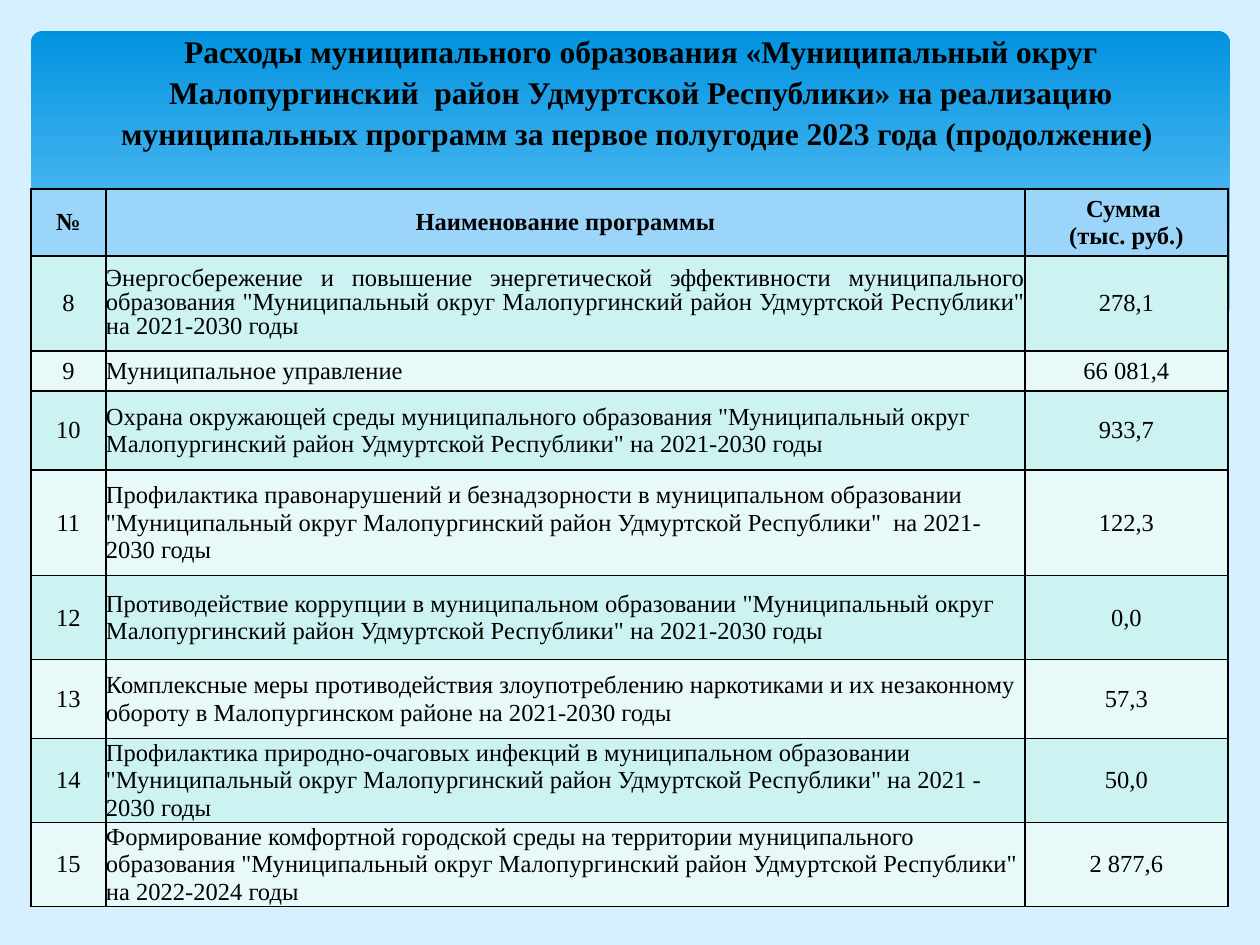
"""Build the slide on municipal programme spending for the first half of 2023."""
from dataclasses import dataclass, field

from lxml import etree
from pptx import Presentation
from pptx import util as u
from pptx.dml import color
from pptx.enum import shapes, text
from pptx.oxml import ns

PX = 914400 / 126
ALIGN = text.PP_ALIGN


@dataclass(frozen=True)
class Theme:
    font: str = "Times New Roman"
    title_size: int = 18
    table_size: int = 14
    ink: str = "000000"
    page: str = "D6F0FF"
    panel_top: str = "0293E0"
    panel_bottom: str = "83D3FE"
    header: str = "9BD5FA"
    bands: tuple[str, str] = ("CCF3F1", "E7F9F8")


@dataclass(frozen=True)
class Box:
    left: int
    top: int
    width: int
    height: int

    def emu(self) -> list[int]:
        return [px(n) for n in (self.left, self.top, self.width, self.height)]


@dataclass(frozen=True)
class Row:
    number: str
    name: str
    amount: str
    height: int
    name_format: dict = field(default_factory=lambda: {"alignment": ALIGN.LEFT})


THEME = Theme()
PANEL = Box(31, 31, 1199, 341)
TABLE = Box(31, 189, 1197, 714)
TITLE = Box(53, 23, 1176, 135)
COLUMNS = (75, 919, 203)
WAVE = (
    (1231, 310), (1172, 330), (1087, 345), (1019, 349), (937, 345), (842, 334),
    (730, 315), (563, 277), (460, 255), (368, 239), (290, 233), (223, 232),
    (150, 236), (84, 248), (29, 268), (29, 415), (1231, 415),
)
HEADING = (
    "Расходы муниципального образования «Муниципальный округ Малопургинский  район "
    "Удмуртской Республики» на реализацию муниципальных программ за первое полугодие "
    "2023 года (продолжение) "
)
DISTRICT = '"Муниципальный округ Малопургинский район Удмуртской Республики"'
HEADER = Row("№", "Наименование программы", "Сумма \n(тыс. руб.)", 63,
             {"alignment": ALIGN.CENTER})
ROWS = (
    Row("8", "Энергосбережение и повышение энергетической эффективности муниципального "
        f"образования {DISTRICT} на 2021-2030 годы", "278,1", 95,
        {"alignment": ALIGN.JUSTIFY, "line_spacing": 0.9}),
    Row("9", "Муниципальное управление", "66 081,4", 40),
    Row("10", "Охрана окружающей среды муниципального образования "
        f"{DISTRICT} на 2021-2030 годы", "933,7", 79),
    Row("11", "Профилактика правонарушений и безнадзорности в муниципальном образовании "
        f"{DISTRICT}  на 2021-2030 годы", "122,3", 106),
    Row("12", "Противодействие коррупции в муниципальном образовании "
        f"{DISTRICT} на 2021-2030 годы", "0,0", 84),
    Row("13", "Комплексные меры противодействия злоупотреблению наркотиками и их "
        "незаконному обороту в Малопургинском районе на 2021-2030 годы", "57,3", 79),
    Row("14", "Профилактика природно-очаговых инфекций в муниципальном образовании "
        f"{DISTRICT} на 2021 - 2030 годы", "50,0", 84),
    Row("15", "Формирование комфортной городской среды на территории муниципального "
        f"образования {DISTRICT} на 2022-2024 годы", "2 877,6", 84),
)


def px(length: int) -> int:
    return round(length * PX)


def rgb(value: str) -> color.RGBColor:
    return color.RGBColor.from_string(value)


def apply(target, values: dict) -> None:
    for name, value in values.items():
        setattr(target, name, value)


def paint(fill, value: str) -> None:
    fill.solid()
    fill.fore_color.rgb = rgb(value)


def style_text(frame, size: int, bold: bool, para_format: dict) -> None:
    for para in frame.paragraphs:
        apply(para, para_format)
        for span in para.runs:
            apply(span.font, {"name": THEME.font, "size": u.Pt(size), "bold": bold})
            span.font.color.rgb = rgb(THEME.ink)


def add_panel(page) -> None:
    panel = page.shapes.add_shape(shapes.MSO_SHAPE.ROUNDED_RECTANGLE, *PANEL.emu())
    panel.adjustments[0] = 0.034
    panel.shadow.inherit = False
    panel.line.fill.background()
    panel.fill.gradient()
    panel.fill.gradient_angle = 270
    stops = ((0, THEME.panel_top), (0.9, THEME.panel_bottom))
    for stop, (position, value) in zip(panel.fill.gradient_stops, stops):
        stop.position = position
        stop.color.rgb = rgb(value)


def add_wave(page) -> None:
    builder = page.shapes.build_freeform(*WAVE[0], scale=PX)
    builder.add_line_segments(WAVE[1:], close=True)
    wave = builder.convert_to_shape()
    wave.shadow.inherit = False
    wave.line.fill.background()
    paint(wave.fill, THEME.page)


def add_borders(cell) -> None:
    properties = cell._tc.get_or_add_tcPr()
    for index, side in enumerate(("lnL", "lnR", "lnT", "lnB")):
        line = etree.Element(ns.qn(f"a:{side}"), w=str(u.Pt(1)))
        solid = etree.SubElement(line, ns.qn("a:solidFill"))
        etree.SubElement(solid, ns.qn("a:srgbClr"), val=THEME.ink)
        properties.insert(index, line)


def fill_cell(cell, content: str, fill: str, bold: bool, para_format: dict) -> None:
    cell.text = content
    cell.vertical_anchor = text.MSO_ANCHOR.MIDDLE
    paint(cell.fill, fill)
    add_borders(cell)
    style_text(cell.text_frame, THEME.table_size, bold, para_format)


def add_programmes(page) -> None:
    rows = (HEADER, *ROWS)
    table = page.shapes.add_table(len(rows), len(COLUMNS), *TABLE.emu()).table
    apply(table, {"first_row": False, "horz_banding": False})
    for column, width in zip(table.columns, COLUMNS):
        column.width = px(width)
    centred = {"alignment": ALIGN.CENTER}
    for index, row in enumerate(rows):
        table.rows[index].height = px(row.height)
        is_header = row is HEADER
        fill = THEME.header if is_header else THEME.bands[(index - 1) % 2]
        number, name, amount = table.rows[index].cells
        fill_cell(number, row.number, fill, is_header, centred)
        fill_cell(name, row.name, fill, is_header, row.name_format)
        fill_cell(amount, row.amount, fill, is_header, centred)
        if not is_header:
            apply(name, {f"margin_{side}": 0 for side in ("left", "top", "right", "bottom")})


def place_title(page) -> None:
    title = page.shapes.title
    apply(title, dict(zip(("left", "top", "width", "height"), TITLE.emu())))
    frame = title.text_frame
    frame.text = HEADING
    apply(frame, {"word_wrap": True, "auto_size": text.MSO_AUTO_SIZE.NONE,
                  "vertical_anchor": text.MSO_ANCHOR.MIDDLE})
    style_text(frame, THEME.title_size, True,
               {"alignment": ALIGN.CENTER, "line_spacing": 1.09})
    title.element.getparent().append(title.element)


def main() -> None:
    deck = Presentation()
    apply(deck, {"slide_width": u.Inches(10), "slide_height": u.Inches(7.5)})
    page = deck.slides.add_slide(deck.slide_layouts[5])
    paint(page.background.fill, THEME.page)
    add_panel(page)
    add_wave(page)
    add_programmes(page)
    place_title(page)
    deck.save("out.pptx")


if __name__ == "__main__":
    main()
